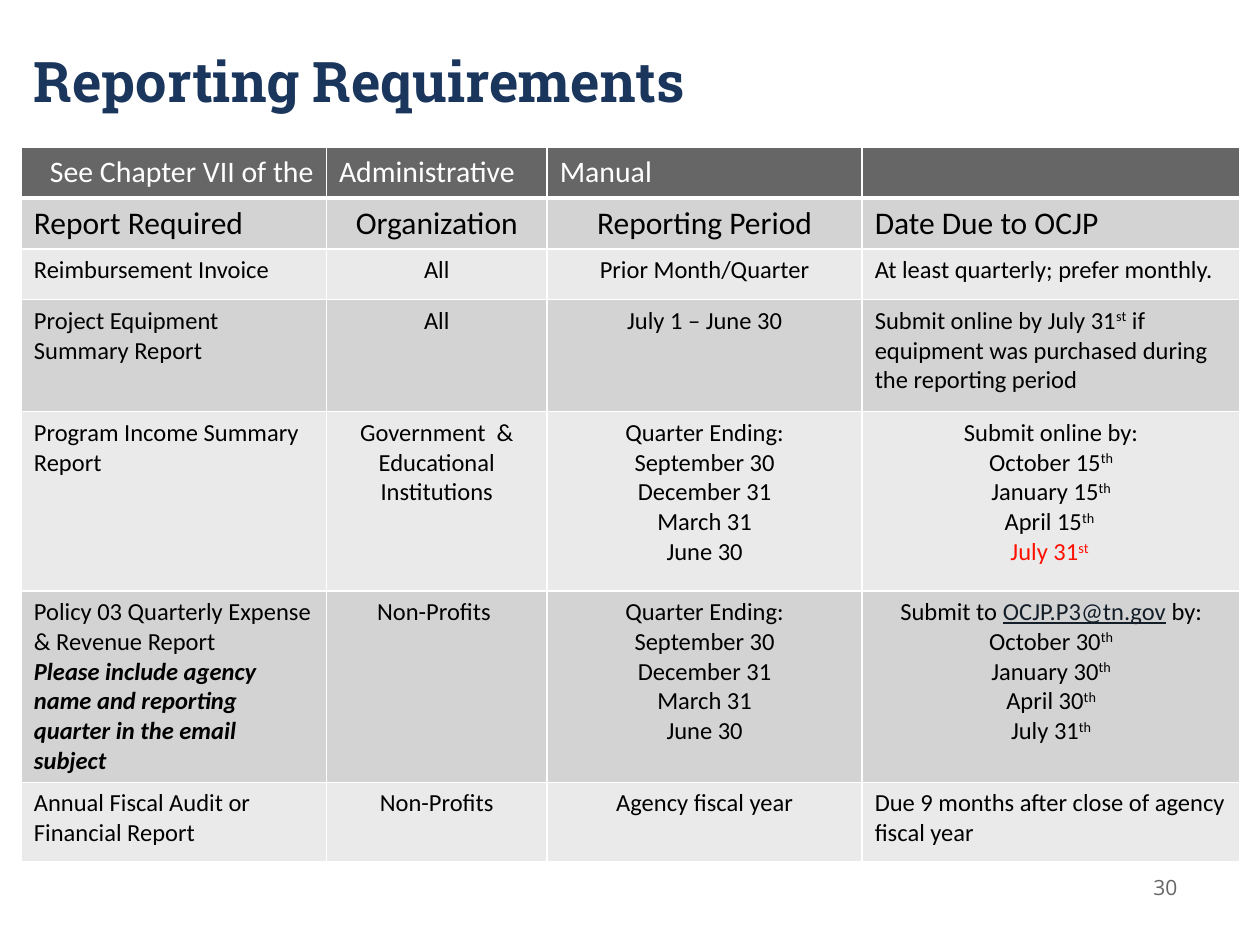
"""Build the reporting requirements slide."""
from dataclasses import dataclass

from lxml.etree import SubElement
from pptx import Presentation
from pptx.dml.color import RGBColor as Color
from pptx.enum.text import MSO_ANCHOR as Anchor, MSO_AUTO_SIZE as AutoSize, PP_ALIGN as Align
from pptx.oxml.ns import qn
from pptx.util import Cm, Pt


@dataclass(frozen=True)
class Theme:
    """Colours, fonts and type sizes of the slide."""
    navy: str = "1B365D"
    grey: str = "666666"
    dark_band: str = "D3D3D3"
    light_band: str = "EAEAEA"
    white: str = "FFFFFF"
    black: str = "000000"
    red: str = "FF0F00"
    link: str = "131E29"
    title_font: str = "Roboto Slab"
    table_font: str = "Calibri"
    number_font: str = "Open Sans"
    title_size: int = 32
    banner_size: int = 17
    heading_size: int = 18
    body_size: int = 14
    number_size: int = 12


THEME = Theme()
COLUMN_WIDTHS = (6.15, 4.45, 6.35, 7.62)
ROW_HEIGHTS = (1.02, 1.02, 1.02, 2.26, 3.61, 3.61, 1.6)


def ordinal(day, suffix, **style):
    """Return the spans of a date with a raised suffix."""
    return [(day, style), (suffix, {**style, "raised": True})]


QUARTERS = ["Quarter Ending:", "September 30", "December 31", "March 31", "June 30"]
INCOME_DATES = [
    "Submit online by:",
    ordinal("October 15", "th"),
    ordinal("January 15", "th"),
    ordinal("April 15", "th "),
    ordinal("July 31", "st ", color=THEME.red),
]
EXPENSE_DATES = [
    [("Submit to ", {}), ("OCJP.P3@tn.gov", {"color": THEME.link, "underline": True}), (" by:", {})],
    *[ordinal(day, "th") for day in ("October 30", "January 30", "April 30", "July 31")],
]
ROWS = [
    ["See Chapter VII of the", "Administrative", "Manual", ""],
    ["Report Required", "Organization", "Reporting Period", "Date Due to OCJP"],
    ["Reimbursement Invoice", "All", "Prior Month/Quarter", "At least quarterly; prefer monthly."],
    ["Project Equipment Summary Report", "All", "July 1 – June 30",
     [ordinal("Submit online by July 31", "st")
      + [(" if equipment was purchased during the reporting period", {})]]],
    ["Program Income Summary Report", "Government  & Educational Institutions", QUARTERS, INCOME_DATES],
    ["Policy 03 Quarterly Expense & Revenue Report", "Non-Profits ", QUARTERS, EXPENSE_DATES],
    ["Annual Fiscal Audit or Financial Report", "Non-Profits", "Agency fiscal year",
     "Due 9 months after close of agency fiscal year"],
]
ROWS[5][0] = [ROWS[5][0], [("Please include agency name and reporting quarter in the email subject",
                           {"bold": True, "italic": True})]]


def format_font(font, name, size, color, bold=False, italic=False, underline=False):
    """Set the face, size, colour and emphasis of a font."""
    font.name, font.size = name, Pt(size)
    font.color.rgb = Color.from_string(color)
    font.bold, font.italic, font.underline = bold, italic, underline


def write_text(frame, content, align=Align.LEFT, **style):
    """Write a string, or a list of paragraphs made of strings or styled spans."""
    paragraphs = [content] if isinstance(content, str) else content
    for index, spans in enumerate(paragraphs):
        para = frame.add_paragraph() if index else frame.paragraphs[0]
        para.alignment = align
        format_font(para.font, **style)
        for text, changes in [(spans, {})] if isinstance(spans, str) else spans:
            look = {**style, **changes}
            raised = look.pop("raised", False)
            if text:
                span = para.add_run()
                span.text = text
                format_font(span.font, **look)
                if raised:
                    span.font._element.set("baseline", "30000")


def draw_borders(cell, bottom):
    """Draw white cell borders with a given bottom width in points."""
    properties = cell._tc.get_or_add_tcPr()
    for side, width in (("L", 1), ("R", 1), ("T", 1), ("B", bottom)):
        line = SubElement(properties, qn(f"a:ln{side}"), w=str(Pt(width)))
        SubElement(SubElement(line, qn("a:solidFill")), qn("a:srgbClr"), val=THEME.white)


def row_style(row):
    """Return the fill, type size and text colour of a table row."""
    if row == 0:
        return THEME.grey, THEME.banner_size, THEME.white
    fill = THEME.dark_band if row % 2 else THEME.light_band
    return fill, THEME.heading_size if row == 1 else THEME.body_size, THEME.black


def cell_alignment(row, column, content):
    """Centre the middle columns and the lists of due dates."""
    if row == 0:
        return Align.RIGHT if column == 0 else Align.LEFT
    is_date_list = column == 3 and len(content) > 1 and not isinstance(content, str)
    return Align.CENTER if column in (1, 2) or is_date_list else Align.LEFT


def add_title(page):
    """Place and format the title."""
    title = page.shapes.title
    title.left, title.top, title.width, title.height = Cm(0.43), Cm(0.48), Cm(24.56), Cm(2.29)
    title.text_frame.auto_size = AutoSize.NONE
    title.text_frame.vertical_anchor = Anchor.MIDDLE
    write_text(title.text_frame, "Reporting Requirements", name=THEME.title_font,
               size=THEME.title_size, color=THEME.navy, bold=True)


def add_report_table(page):
    """Add the table of reports and due dates."""
    table = page.shapes.add_table(len(ROWS), len(COLUMN_WIDTHS), Cm(0.43), Cm(2.97),
                                  Cm(sum(COLUMN_WIDTHS)), Cm(sum(ROW_HEIGHTS))).table
    for column, width in zip(table.columns, COLUMN_WIDTHS):
        column.width = Cm(width)
    for row, (contents, height) in enumerate(zip(ROWS, ROW_HEIGHTS)):
        table.rows[row].height = Cm(height)
        fill, size, color = row_style(row)
        for column, content in enumerate(contents):
            cell = table.cell(row, column)
            draw_borders(cell, bottom=1 if row else 3)
            cell.fill.solid()
            cell.fill.fore_color.rgb = Color.from_string(fill)
            write_text(cell.text_frame, content, align=cell_alignment(row, column, content),
                       name=THEME.table_font, size=size, color=color)


def add_page_number(page):
    """Add the page number in a turned box with vertical text."""
    box = page.shapes.add_textbox(Cm(22.96), Cm(17.25), Cm(1.07), Cm(1.27))
    box.rotation = 270
    frame = box.text_frame
    frame.word_wrap = True
    frame.vertical_anchor = Anchor.MIDDLE
    frame._txBody.bodyPr.set("vert", "vert")
    write_text(frame, "30", align=Align.CENTER, name=THEME.number_font,
               size=THEME.number_size, color=THEME.grey)


def main():
    """Build and save the deck."""
    deck = Presentation()
    deck.slide_width, deck.slide_height = Cm(25.4), Cm(19.05)
    page = deck.slides.add_slide(deck.slide_layouts[5])
    add_page_number(page)
    add_title(page)
    add_report_table(page)
    deck.save("out.pptx")


if __name__ == "__main__":
    main()
